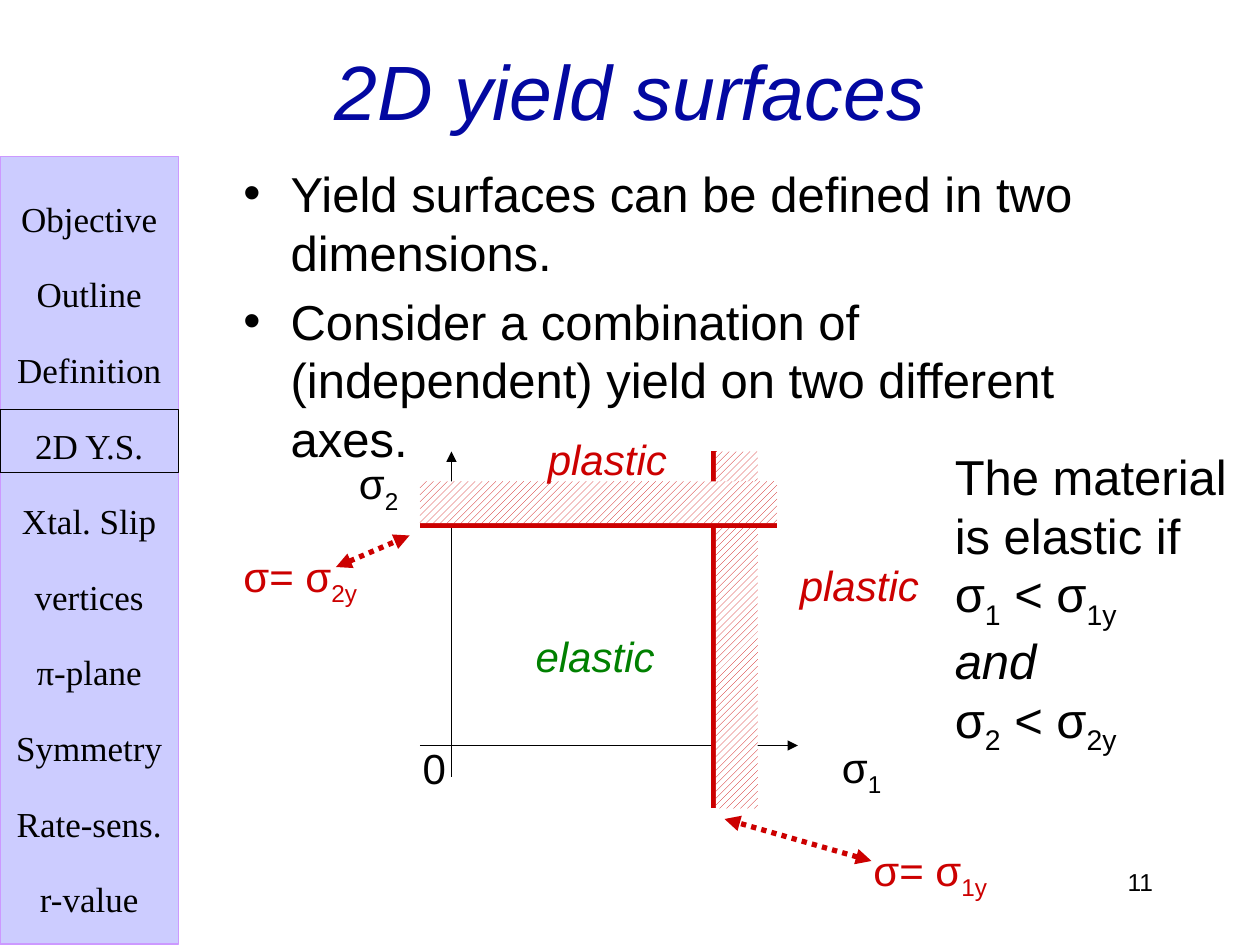
from dataclasses import dataclass, replace

from lxml.etree import SubElement
from pptx import Presentation
from pptx.dml.color import RGBColor
from pptx.enum.dml import MSO_LINE, MSO_PATTERN
from pptx.enum.shapes import MSO_CONNECTOR, MSO_SHAPE
from pptx.enum.text import MSO_ANCHOR, PP_ALIGN
from pptx.oxml.ns import qn
from pptx.util import Pt


@dataclass(frozen=True)
class Ink:
    size: int
    color: str = "000000"
    italic: bool = False
    font: str = "Arial"


@dataclass(frozen=True)
class Theme:
    red: str = "CC0000"
    black: str = "000000"
    white: str = "FFFFFF"
    panel: str = "CCCCFF"
    panel_edge: str = "CC99FF"
    thin: float = 0.75
    thick: float = 3
    title: Ink = Ink(44, "0308A1", True)
    body: Ink = Ink(28)
    axis: Ink = Ink(24)
    elastic: Ink = Ink(24, "008000", True)
    plastic: Ink = Ink(24, "CC0000", True)
    limit: Ink = Ink(24, "CC0000")
    menu: Ink = Ink(20, font="Times New Roman")
    number: Ink = Ink(14)


class SlideBuilder:
    def __init__(self, slide, theme):
        self.slide = slide
        self.theme = theme

    def frame(self, left, top, width, height, wrap=True, anchor=MSO_ANCHOR.TOP):
        box = self.slide.shapes.add_textbox(Pt(left), Pt(top), Pt(width), Pt(height))
        box.text_frame.word_wrap = wrap
        box.text_frame.vertical_anchor = anchor
        return box.text_frame

    def add_runs(self, paragraph, text, ink):
        for index, part in enumerate(text.split("|")):
            run = paragraph.add_run()
            run.text = part
            run.font.size = Pt(ink.size)
            run.font.name = ink.font
            run.font.italic = ink.italic
            run.font.color.rgb = RGBColor.from_string(ink.color)
            if index % 2:
                run.font._element.set("baseline", "-25000")

    def paragraphs(self, frame, texts, ink, align=PP_ALIGN.LEFT):
        for index, text in enumerate(texts):
            paragraph = frame.add_paragraph() if index else frame.paragraphs[0]
            paragraph.alignment = align
            self.add_runs(paragraph, text, ink)
        return frame.paragraphs

    def label(self, left, top, width, text, ink):
        self.paragraphs(self.frame(left, top, width, 36, wrap=False), [text], ink)

    def bullets(self, frame, texts, ink):
        for paragraph in self.paragraphs(frame, texts, ink):
            paragraph.space_before = Pt(ink.size * 0.2)
            properties = paragraph._p.get_or_add_pPr()
            properties.set("marL", str(Pt(27)))
            properties.set("indent", str(Pt(-27)))
            SubElement(properties, qn("a:buFont")).set("typeface", ink.font)
            SubElement(properties, qn("a:buChar")).set("char", "•")

    def stacked(self, paragraph, lines):
        for index, (text, ink) in enumerate(lines):
            if index:
                paragraph.add_line_break()
            self.add_runs(paragraph, text, ink)

    def rectangle(self, left, top, width, height, fill=None, edge=None):
        shape = self.slide.shapes.add_shape(
            MSO_SHAPE.RECTANGLE, Pt(left), Pt(top), Pt(width), Pt(height))
        shape.shadow.inherit = False
        if fill:
            shape.fill.solid()
            shape.fill.fore_color.rgb = RGBColor.from_string(fill)
        else:
            shape.fill.background()
        if edge:
            shape.line.color.rgb = RGBColor.from_string(edge)
            shape.line.width = Pt(self.theme.thin)
        else:
            shape.line.fill.background()
        return shape

    def hatched_band(self, left, top, width, height, rotation=0):
        band = self.rectangle(left, top, width, height)
        band.rotation = rotation
        band.fill.patterned()
        band.fill.pattern = MSO_PATTERN.WIDE_UPWARD_DIAGONAL
        band.fill.fore_color.rgb = RGBColor.from_string(self.theme.red)
        band.fill.back_color.rgb = RGBColor.from_string(self.theme.white)

    def line(self, start, end, color, width, arrows=(), dash=None):
        connector = self.slide.shapes.add_connector(
            MSO_CONNECTOR.STRAIGHT, *map(Pt, start + end))
        connector.line.color.rgb = RGBColor.from_string(color)
        connector.line.width = Pt(width)
        if dash:
            connector.line.dash_style = dash
        for arrow in arrows:
            SubElement(connector.line._get_or_add_ln(), qn(f"a:{arrow}")).set("type", "triangle")
        SubElement(connector._element.spPr, qn("a:effectLst"))

    def axis(self, start, end):
        self.line(start, end, self.theme.black, self.theme.thin, ["tailEnd"])

    def yield_limit(self, start, end):
        self.line(start, end, self.theme.red, self.theme.thick)

    def pointer(self, start, end):
        self.line(start, end, self.theme.red, self.theme.thick,
                  ["headEnd", "tailEnd"], MSO_LINE.ROUND_DOT)


def main():
    presentation = Presentation()
    presentation.slide_width, presentation.slide_height = Pt(720), Pt(540)
    theme = Theme()
    page = SlideBuilder(
        presentation.slides.add_slide(presentation.slide_layouts[6]), theme)

    page.rectangle(0, 89.5, 102, 450, theme.panel, theme.panel_edge)
    sections = ["Objective", "Outline", "Definition", "2D Y.S.", "Xtal. Slip",
                "vertices", "π-plane", "Symmetry", "Rate-sens.", "r-value"]
    menu = page.frame(0, 90, 102, 440)
    for entry in page.paragraphs(menu, sections, theme.menu, PP_ALIGN.CENTER):
        entry.line_spacing = 1.8

    page.paragraphs(page.frame(516, 492, 150, 36), ["11"], theme.number, PP_ALIGN.RIGHT)
    page.paragraphs(page.frame(54, 6, 612, 90, anchor=MSO_ANCHOR.MIDDLE),
                    ["2D yield surfaces"], theme.title, PP_ALIGN.CENTER)
    page.bullets(page.frame(132, 90, 534, 324), [
        "Yield surfaces can be defined in two dimensions.",
        "Consider a combination of (independent) yield on two different axes.",
    ], theme.body)

    condition = page.frame(538.5, 251.5, 170, 204.5, wrap=False)
    page.stacked(condition.paragraphs[0], [
        ("The material", theme.body),
        ("is elastic if", theme.body),
        ("σ|1| < σ|1y", theme.body),
        ("and", replace(theme.body, italic=True)),
    ])
    page.add_runs(condition.add_paragraph(), "σ|2| < σ|2y", theme.body)

    page.axis((258, 444), (258, 258))
    page.axis((240, 426), (456, 426))
    page.label(234.5, 421, 28, "0", theme.axis)
    page.label(474, 420, 37, "σ|1", theme.axis)
    page.label(198, 258, 37, "σ|2", theme.axis)

    page.yield_limit((408, 258), (408, 462))
    page.hatched_band(409, 258, 24, 204)
    page.yield_limit((240, 300), (444, 300))
    page.hatched_band(330, 185, 24, 204, rotation=270)

    page.label(299, 357, 83, "elastic", theme.elastic)
    page.label(450, 316, 83, "plastic", theme.plastic)
    page.label(306, 244, 83, "plastic", theme.plastic)
    page.label(492, 479, 80, "σ= σ|1y", theme.limit)
    page.label(132, 311, 80, "σ= σ|2y", theme.limit)
    page.pointer((498, 492), (414, 468))
    page.pointer((192, 324), (234, 306))

    page.rectangle(0, 234, 102, 36, edge=theme.black)
    presentation.save("out.pptx")


if __name__ == "__main__":
    main()
